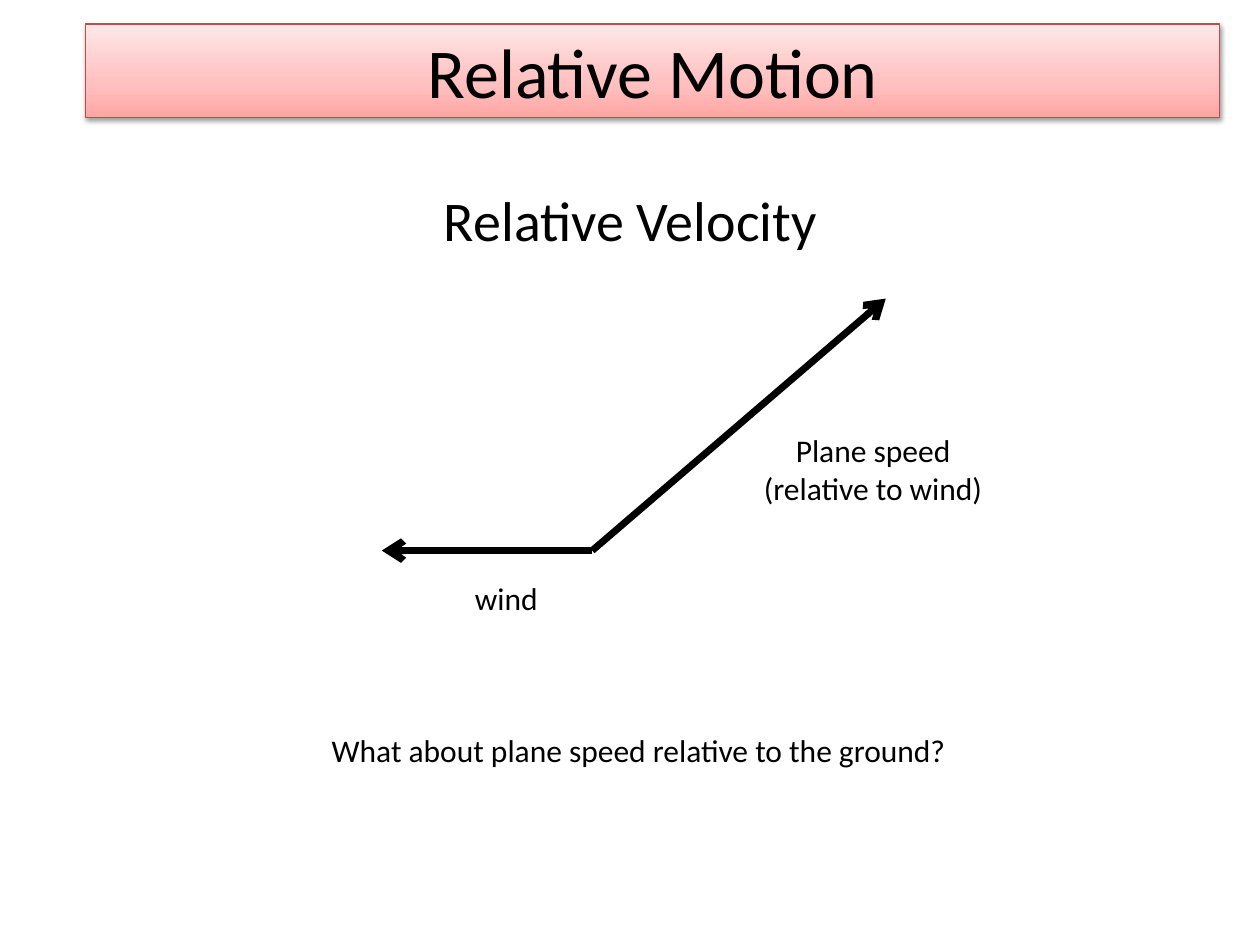
from dataclasses import dataclass

import pptx
import pptx.dml.color
import pptx.enum.shapes
import pptx.enum.text
import pptx.oxml
import pptx.oxml.ns
import pptx.util

RGBColor = pptx.dml.color.RGBColor
BLACK = RGBColor(0x00, 0x00, 0x00)
BANNER_BORDER = RGBColor(0xBF, 0x4C, 0x48)
BANNER_STOPS = (
    (0, RGBColor(0xFF, 0xA6, 0xA5)),
    (35, RGBColor(0xFF, 0xC0, 0xBF)),
    (100, RGBColor(0xFF, 0xE7, 0xE7)),
)

COLUMNS, ROWS = 100, 75
SLIDE_WIDTH = pptx.util.Inches(10)
SLIDE_HEIGHT = pptx.util.Inches(7.5)
NAMESPACE = pptx.oxml.ns.nsdecls("a")
ALIGN = pptx.enum.text.PP_ALIGN
AUTO_SIZE = pptx.enum.text.MSO_AUTO_SIZE
ANCHOR = pptx.enum.text.MSO_ANCHOR


@dataclass(frozen=True)
class Box:
    column: float
    row: float
    columns: float
    rows: float


@dataclass(frozen=True)
class Label:
    text: str
    box: Box
    size: int = 18
    alignment: ALIGN = ALIGN.CENTER
    wrap: bool = False


@dataclass(frozen=True)
class Vector:
    column: float
    row: float


ORIGIN = Vector(47, 43.7)
TIPS = (Vector(70.3, 23.7), Vector(30.3, 43.7))
TITLE = Label("Relative Motion", Box(6.8, 1.9, 90, 7.4), 40, wrap=True)
LABELS = (
    Label("Relative Velocity", Box(16.7, 14.2, 66.7, 7.5), 32, wrap=True),
    Label("wind", Box(36.7, 45.5, 7.1, 4), alignment=ALIGN.LEFT),
    Label("Plane speed\n(relative to wind)", Box(59.5, 33.7, 19.6, 7.1)),
    Label("What about plane speed relative to the ground?", Box(25, 57.5, 51.4, 4)),
)


def across(columns: float) -> int:
    return round(SLIDE_WIDTH * columns / COLUMNS)


def down(rows: float) -> int:
    return round(SLIDE_HEIGHT * rows / ROWS)


def apply_format(target, values: dict) -> None:
    for name, value in values.items():
        setattr(target, name, value)


def place(shape, box: Box) -> None:
    apply_format(shape, {
        "left": across(box.column),
        "top": down(box.row),
        "width": across(box.columns),
        "height": down(box.rows),
    })


def write_text(shape, label: Label) -> None:
    frame = shape.text_frame
    frame.text = label.text
    apply_format(frame, {
        "word_wrap": label.wrap,
        "auto_size": AUTO_SIZE.NONE if label.wrap else AUTO_SIZE.SHAPE_TO_FIT_TEXT,
    })
    for paragraph in frame.paragraphs:
        paragraph.alignment = label.alignment
        for run in paragraph.runs:
            apply_format(run.font, {"name": "Calibri", "size": pptx.util.Pt(label.size)})
            run.font.color.rgb = BLACK


def draw_title(slide) -> None:
    shape = slide.shapes.title
    place(shape, TITLE.box)
    write_text(shape, TITLE)
    apply_format(shape.text_frame, {
        "margin_left": 0,
        "margin_top": 0,
        "margin_right": 0,
        "margin_bottom": 0,
        "vertical_anchor": ANCHOR.MIDDLE,
    })
    stops = "".join(
        f'<a:gs pos="{share * 1000}"><a:srgbClr val="{color}"/></a:gs>'
        for share, color in BANNER_STOPS
    )
    properties = shape.element.spPr
    properties.append(pptx.oxml.parse_xml(
        f'<a:gradFill {NAMESPACE} rotWithShape="1"><a:gsLst>{stops}</a:gsLst>'
        '<a:lin ang="16200000" scaled="0"/></a:gradFill>'
    ))
    shape.line.color.rgb = BANNER_BORDER
    shape.line.width = pptx.util.Pt(0.75)
    properties.append(pptx.oxml.parse_xml(
        f'<a:effectLst {NAMESPACE}><a:outerShdw blurRad="{pptx.util.Pt(3.1)}" '
        f'dist="{pptx.util.Pt(1.6)}" dir="5400000" rotWithShape="0">'
        f'<a:srgbClr val="{BLACK}"><a:alpha val="38000"/></a:srgbClr>'
        '</a:outerShdw></a:effectLst>'
    ))


def draw_label(slide, label: Label) -> None:
    shape = slide.shapes.add_textbox(0, 0, 0, 0)
    place(shape, label.box)
    write_text(shape, label)


def draw_arrow(slide, start: Vector, tip: Vector) -> None:
    connector = slide.shapes.add_connector(
        pptx.enum.shapes.MSO_CONNECTOR.STRAIGHT,
        across(start.column), down(start.row), across(tip.column), down(tip.row),
    )
    connector.line.color.rgb = BLACK
    connector.line.width = pptx.util.Pt(4)
    connector.line._get_or_add_ln().append(
        pptx.oxml.parse_xml(f'<a:tailEnd {NAMESPACE} type="arrow"/>')
    )
    connector.element.spPr.append(pptx.oxml.parse_xml(f"<a:effectLst {NAMESPACE}/>"))


def main() -> None:
    presentation = pptx.Presentation()
    apply_format(presentation, {"slide_width": SLIDE_WIDTH, "slide_height": SLIDE_HEIGHT})
    slide = presentation.slides.add_slide(presentation.slide_layouts.get_by_name("Title Only"))
    draw_title(slide)
    for tip in TIPS:
        draw_arrow(slide, ORIGIN, tip)
    for label in LABELS:
        draw_label(slide, label)
    presentation.save("out.pptx")


if __name__ == "__main__":
    main()
